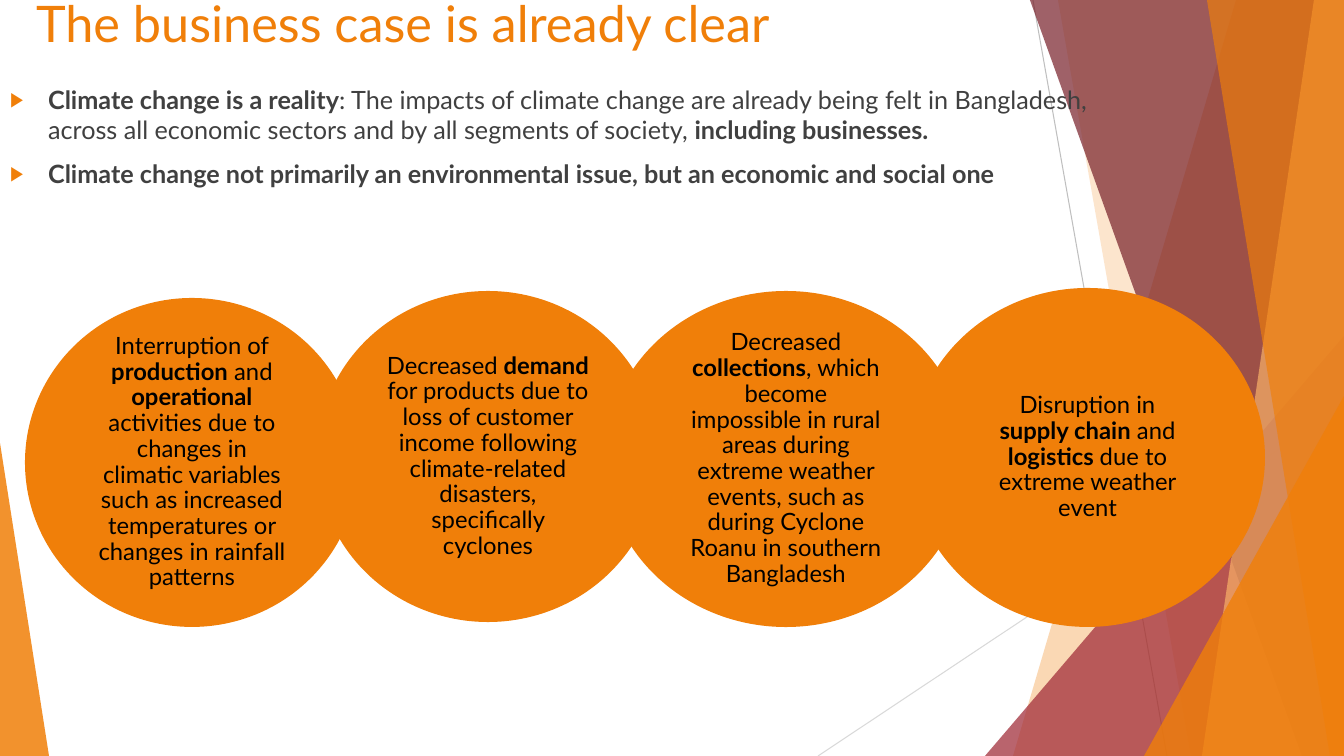
from lxml.etree import SubElement
from pptx import Presentation
from pptx.dml.color import RGBColor
from pptx.enum.shapes import MSO_CONNECTOR, MSO_SHAPE
from pptx.enum.text import MSO_ANCHOR, MSO_AUTO_SIZE, PP_ALIGN
from pptx.oxml.ns import qn
from pptx.util import Pt

PX = 914400 / 100.8
WIDE, HIGH = 1344, 756
FONT = "Lato"
HUES = {"orange": "F07F09", "peach": "F9B268", "red": "9F2936",
        "wine": "771F28", "text": "404040", "black": "000000",
        "pale": "D9D9D9", "gray": "BFBFBF"}

# Words between asterisks are bold.
TITLE = "The business case is already clear"
POINTS = [
    "*Climate change is a reality*: The impacts of climate change are already "
    "being felt in Bangladesh, across all economic sectors and by all segments "
    "of society, *including businesses.*",
    "*Climate change not primarily an environmental issue, but an economic "
    "and social one*",
]
# box, side inset, text
CIRCLES = [
    ((25, 298, 334, 329), 23,
     "Interruption of *production* and *operational* activities due to changes "
     "in climatic variables such as increased temperatures or changes in "
     "rainfall patterns"),
    ((317, 291, 342, 331), 18,
     "Decreased* demand* for products due to loss of customer income following "
     "climate-related disasters, specifically cyclones"),
    ((605, 291, 362, 336), 31,
     "Decreased* collections*, which become impossible in rural areas during "
     "extreme weather events, such as during Cyclone Roanu in southern "
     "Bangladesh"),
    ((910, 288, 355, 339), 31,
     "Disruption in *supply chain* and *logistics *due to extreme weather event"),
]
RAYS = [((818, 756), (1344, 406), "pale"), ((1033, 0), (1167, 756), "gray")]


def band(top, foot):
    """Outline from a slanted left edge to the right edge of the slide."""
    return [(top, 0), (foot, HIGH), (WIDE, HIGH), (WIDE, 0)]


def wedge(foot, top):
    """Triangle in the lower right corner of the slide."""
    return [(foot, HIGH), (WIDE, top), (WIDE, HIGH)]


# outline, colour, opacity in percent
SHARDS = [
    (band(1236, 1013), "orange", 30),
    (band(1058, 1191), "orange", 20),
    (wedge(985, 336), "red", 72),
    (band(1030, 1302), "wine", 70),
    (band(1314, 1202), "peach", 70),
    (band(1207, 1330), "orange", 65),
    (wedge(1144, 396), "orange", 80),
    ([(0, 443), (49, HIGH), (0, HIGH)], "orange", 85),
]


def px(n):
    return round(n * PX)


def rgb(name):
    return RGBColor.from_string(HUES[name])


def assign(thing, **values):
    for key, value in values.items():
        setattr(thing, key, value)


def place(shape, box):
    assign(shape, **dict(zip(("left", "top", "width", "height"), map(px, box))))


def paint(shape, hue, alpha=100):
    shape.shadow.inherit = False
    shape.line.fill.background()
    shape.fill.solid()
    shape.fill.fore_color.rgb = rgb(hue)
    if alpha < 100:
        color = shape.fill._xPr.find(qn("a:solidFill"))[0]
        SubElement(color, qn("a:alpha"), val=str(alpha * 1000))


def write(para, text, size, hue):
    for i, part in enumerate(text.split("*")):
        if part:
            run = para.add_run()
            run.text = part
            assign(run.font, name=FONT, size=Pt(size), bold=i % 2 == 1)
            run.font.color.rgb = rgb(hue)


def bullet(para):
    props = para._p.get_or_add_pPr()
    props.set("marL", str(px(38)))
    props.set("indent", str(px(-38)))
    tint = SubElement(props, qn("a:buClr"))
    SubElement(tint, qn("a:srgbClr"), val=HUES["orange"])
    SubElement(props, qn("a:buSzPct"), val="80000")
    SubElement(props, qn("a:buChar"), char="▶")


def main():
    deck = Presentation()
    assign(deck, slide_width=px(WIDE), slide_height=px(HIGH))
    slide = deck.slides.add_slide(deck.slide_layouts[1])
    shapes = slide.shapes
    title, body = shapes.title, slide.placeholders[1]

    for start, end, hue in RAYS:
        ray = shapes.add_connector(MSO_CONNECTOR.STRAIGHT,
                                   *map(px, start + end))
        ray.line.color.rgb = rgb(hue)
        ray.line.width = Pt(0.75)
        SubElement(ray._element.spPr, qn("a:effectLst"))

    for outline, hue, alpha in SHARDS:
        pen = shapes.build_freeform(*outline[0], scale=PX)
        pen.add_line_segments(outline[1:], close=True)
        paint(pen.convert_to_shape(), hue, alpha)

    for holder, box in ((body, (0, 79, 1101, 427)), (title, (26, -13, 1108, 133))):
        shapes._spTree.append(holder._element)  # bring above the shards
        place(holder, box)
        assign(holder.text_frame, word_wrap=True, auto_size=MSO_AUTO_SIZE.NONE,
               vertical_anchor=MSO_ANCHOR.TOP)

    head = title.text_frame.paragraphs[0]
    head.alignment = PP_ALIGN.LEFT
    write(head, TITLE, 36, "orange")

    frame = body.text_frame
    for i, text in enumerate(POINTS):
        para = frame.add_paragraph() if i else frame.paragraphs[0]
        para.space_before = Pt(10)
        bullet(para)
        write(para, text, 18, "text")

    for box, inset, text in CIRCLES:
        disc = shapes.add_shape(MSO_SHAPE.OVAL, *map(px, box))
        paint(disc, "orange")
        frame = disc.text_frame
        assign(frame, word_wrap=True, vertical_anchor=MSO_ANCHOR.MIDDLE,
               margin_left=px(inset), margin_right=px(inset),
               margin_top=px(2), margin_bottom=px(2))
        para = frame.paragraphs[0]
        assign(para, alignment=PP_ALIGN.CENTER, line_spacing=0.9)
        write(para, text, 17, "black")

    deck.save("out.pptx")


if __name__ == "__main__":
    main()
